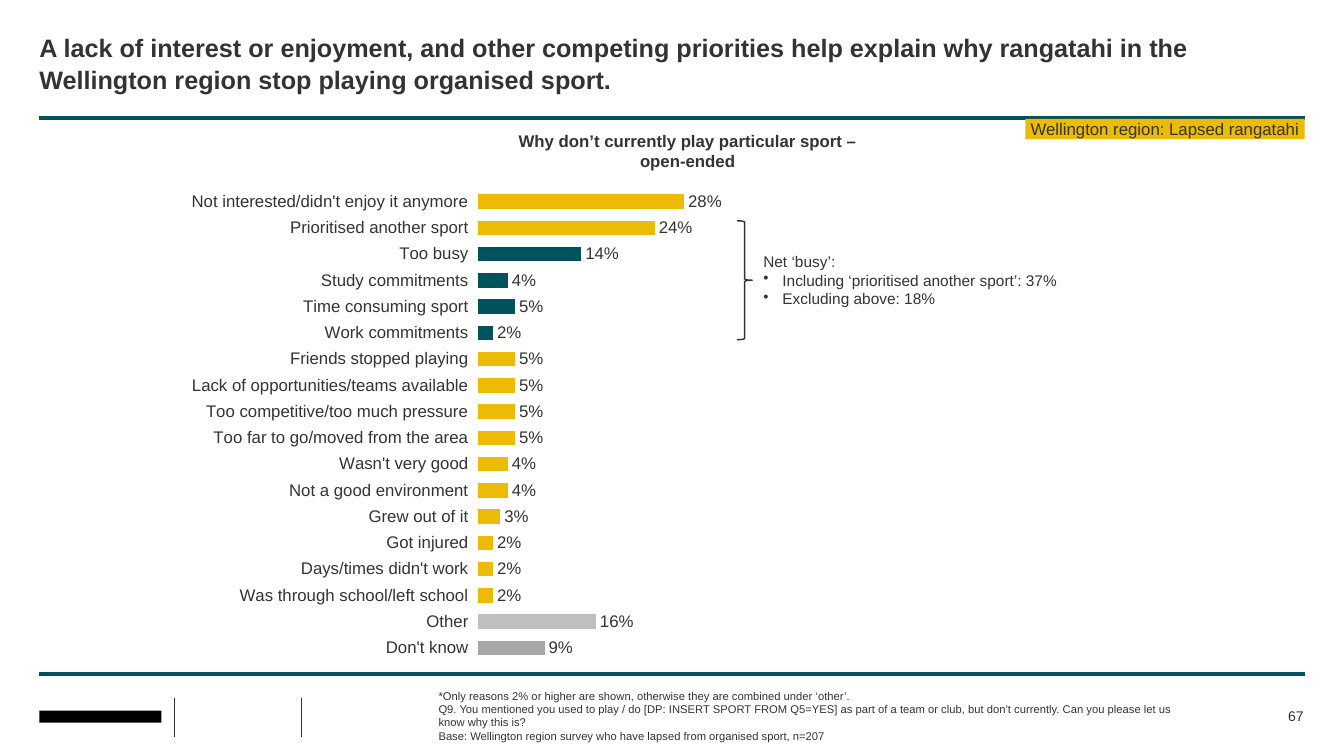
from lxml.etree import SubElement
from pptx import Presentation
from pptx.chart.data import CategoryChartData
from pptx.dml.color import RGBColor
from pptx.enum.chart import XL_CHART_TYPE, XL_LABEL_POSITION, XL_TICK_LABEL_POSITION, XL_TICK_MARK
from pptx.enum.shapes import MSO_CONNECTOR, MSO_SHAPE
from pptx.enum.text import MSO_ANCHOR, PP_ALIGN
from pptx.oxml.ns import qn
from pptx.util import Inches, Pt

WIDTH, HEIGHT = Inches(13.33), Inches(7.5)
FONT = "Arial"
INK, TEAL, GOLD, WHITE = "333333", "00525C", "ECBB06", "FFFFFF"

# Shared margins and rows, as percentages of the slide
LEFT, RIGHT = 2.93, 97.07
CONTENT = RIGHT - LEFT
FOOTER_TOP, FOOTER_HEIGHT = 93.2, 2.93

REASONS = [
    ("Not interested/didn't enjoy it anymore", 28, GOLD),
    ("Prioritised another sport", 24, GOLD),
    ("Too busy", 14, TEAL),
    ("Study commitments", 4, TEAL),
    ("Time consuming sport", 5, TEAL),
    ("Work commitments", 2, TEAL),
    ("Friends stopped playing", 5, GOLD),
    ("Lack of opportunities/teams available", 5, GOLD),
    ("Too competitive/too much pressure", 5, GOLD),
    ("Too far to go/moved from the area", 5, GOLD),
    ("Wasn't very good", 4, GOLD),
    ("Not a good environment", 4, GOLD),
    ("Grew out of it", 3, GOLD),
    ("Got injured", 2, GOLD),
    ("Days/times didn't work", 2, GOLD),
    ("Was through school/left school", 2, GOLD),
    ("Other", 16, "BFBFBF"),
    ("Don't know", 9, "A6A6A6"),
]


def color(code):
    return RGBColor.from_string(code)


def place(left, top, width, height):
    """Turn percentages of the slide into lengths."""
    return (int(WIDTH * left / 100), int(HEIGHT * top / 100),
            int(WIDTH * width / 100), int(HEIGHT * height / 100))


def style_font(font, size, bold=False):
    font.name, font.size, font.bold = FONT, Pt(size), bold
    font.color.rgb = color(INK)


def add_bullet(paragraph):
    properties = paragraph._p.get_or_add_pPr()
    properties.set("marL", str(Inches(0.19)))
    properties.set("indent", str(-Inches(0.19)))
    SubElement(properties, qn("a:buChar"), char="•")


def write(holder, lines, size, bold=False, align=PP_ALIGN.LEFT,
          anchor=MSO_ANCHOR.TOP, bullets_from=None, spacing=None):
    frame = holder.text_frame
    frame.word_wrap = True
    frame.vertical_anchor = anchor
    frame.margin_left = frame.margin_right = frame.margin_top = frame.margin_bottom = 0
    for number, line in enumerate(lines):
        paragraph = frame.add_paragraph() if number else frame.paragraphs[0]
        paragraph.text = line
        paragraph.alignment = align
        if spacing:
            paragraph.line_spacing = spacing
        if bullets_from is not None and number >= bullets_from:
            add_bullet(paragraph)
        style_font(paragraph.font, size, bold)


def add_text(slide, box, lines, size, **options):
    write(slide.shapes.add_textbox(*place(*box)), lines, size, **options)


def add_block(slide, box, fill=None, line=None, kind=MSO_SHAPE.RECTANGLE):
    block = slide.shapes.add_shape(kind, *place(*box))
    block.shadow.inherit = False
    if fill:
        block.fill.solid()
        block.fill.fore_color.rgb = color(fill)
    else:
        block.fill.background()
    if line:
        block.line.color.rgb = color(line)
        block.line.width = Pt(1)
    else:
        block.line.fill.background()
    return block


def add_rule(slide, start, end, code, weight):
    rule = slide.shapes.add_connector(
        MSO_CONNECTOR.STRAIGHT, *place(*start, *end))
    rule.line.color.rgb = color(code)
    rule.line.width = Pt(weight)
    SubElement(rule._element.spPr, qn("a:effectLst"))


def fix_plot_area(chart, x, y, w, h):
    """Set the inner plot area as shares of the chart."""
    plot_area = chart._chartSpace.chart.plotArea
    layout = plot_area.find(qn("c:layout"))
    if layout is None:
        layout = SubElement(plot_area, qn("c:layout"))
        plot_area.insert(0, layout)
    manual = SubElement(layout, qn("c:manualLayout"))
    settings = [("layoutTarget", "inner"), ("xMode", "edge"), ("yMode", "edge"),
                ("x", x), ("y", y), ("w", w), ("h", h)]
    for tag, value in settings:
        SubElement(manual, qn(f"c:{tag}"), val=str(value))


def add_reasons_chart(slide, box):
    data = CategoryChartData(number_format="0%")
    data.categories = [reason for reason, _, _ in REASONS]
    data.add_series("Series 1", [percent / 100 for _, percent, _ in REASONS])
    chart = slide.shapes.add_chart(
        XL_CHART_TYPE.BAR_CLUSTERED, *place(*box), data).chart
    chart.has_legend = chart.has_title = False
    style_font(chart.font, 12)

    reasons_axis = chart.category_axis
    reasons_axis.reverse_order = True
    reasons_axis.major_tick_mark = reasons_axis.minor_tick_mark = XL_TICK_MARK.NONE
    reasons_axis.tick_label_position = XL_TICK_LABEL_POSITION.LOW
    reasons_axis.format.line.fill.background()
    style_font(reasons_axis.tick_labels.font, 12)

    share_axis = chart.value_axis
    share_axis.minimum_scale, share_axis.maximum_scale = 0, 1
    share_axis.has_major_gridlines = False
    share_axis.visible = False

    bars = chart.plots[0]
    bars.gap_width, bars.overlap = 80, -10
    bars.vary_by_categories = False
    bars.has_data_labels = True
    labels = bars.data_labels
    labels.show_value = True
    labels.number_format, labels.number_format_is_linked = "0%", False
    labels.position = XL_LABEL_POSITION.OUTSIDE_END
    style_font(labels.font, 12)

    series = bars.series[0]
    series.format.fill.solid()
    series.format.fill.fore_color.rgb = color(GOLD)
    for number, (_, _, code) in enumerate(REASONS):
        if code != GOLD:
            fill = series.points[number].format.fill
            fill.solid()
            fill.fore_color.rgb = color(code)
    fix_plot_area(chart, 0.347, 0, 0.581, 1)


def main():
    deck = Presentation()
    deck.slide_width, deck.slide_height = WIDTH, HEIGHT
    slide = deck.slides.add_slide(deck.slide_layouts[6])

    # Frame: wide rules, footer dividers and a plain mark
    for y in (15.6, 89.2):
        add_rule(slide, (LEFT, y), (RIGHT, y), TEAL, 3)
    for x in (12.98, 22.43):
        add_rule(slide, (x, 92.27), (x, 97.47), INK, 1)
    add_block(slide, (LEFT, 94, 9.08, 1.6), fill="000000")

    # Title, chart heading and audience tag
    add_text(slide, (LEFT, 4, CONTENT, 5.87), [
        "A lack of interest or enjoyment, and other competing priorities help explain why "
        "rangatahi in the Wellington region stop playing organised sport."],
        18, bold=True, spacing=1.07)
    add_reasons_chart(slide, (LEFT, 24.93, CONTENT, 62.53))
    add_text(slide, (38.11, 17.33, 26.11, 5.33),
             ["Why don’t currently play particular sport – open-ended"],
             12, bold=True, align=PP_ALIGN.CENTER)
    audience = add_block(slide, (76.29, 15.73, 20.78, 2.67), fill=GOLD)
    write(audience, ["Wellington region: Lapsed rangatahi"], 12,
          align=PP_ALIGN.CENTER, anchor=MSO_ANCHOR.MIDDLE)

    # Net of the "busy" reasons
    add_block(slide, (54.84, 29.2, 1.13, 15.73), line=INK, kind=MSO_SHAPE.RIGHT_BRACE)
    net_busy = add_block(slide, (56.79, 33.33, 24.31, 7.47), fill=WHITE)
    write(net_busy, ["Net ‘busy’:", "Including ‘prioritised another sport’: 37%",
                     "Excluding above: 18%"],
          11, anchor=MSO_ANCHOR.MIDDLE, bullets_from=1)

    # Footnotes and page number
    add_text(slide, (32.63, FOOTER_TOP, 55.36, FOOTER_HEIGHT), [
        "*Only reasons 2% or higher are shown, otherwise they are combined under ‘other’.",
        "Q9. You mentioned you used to play / do [DP: INSERT SPORT FROM Q5=YES] as part of a "
        "team or club, but don’t currently. Can you please let us know why this is?",
        "Base: Wellington region survey who have lapsed from organised sport, n=207"],
        8, anchor=MSO_ANCHOR.MIDDLE)
    add_text(slide, (89.05, FOOTER_TOP, 7.95, FOOTER_HEIGHT), ["67"], 10,
             align=PP_ALIGN.RIGHT, anchor=MSO_ANCHOR.MIDDLE)

    deck.save("out.pptx")


if __name__ == "__main__":
    main()
